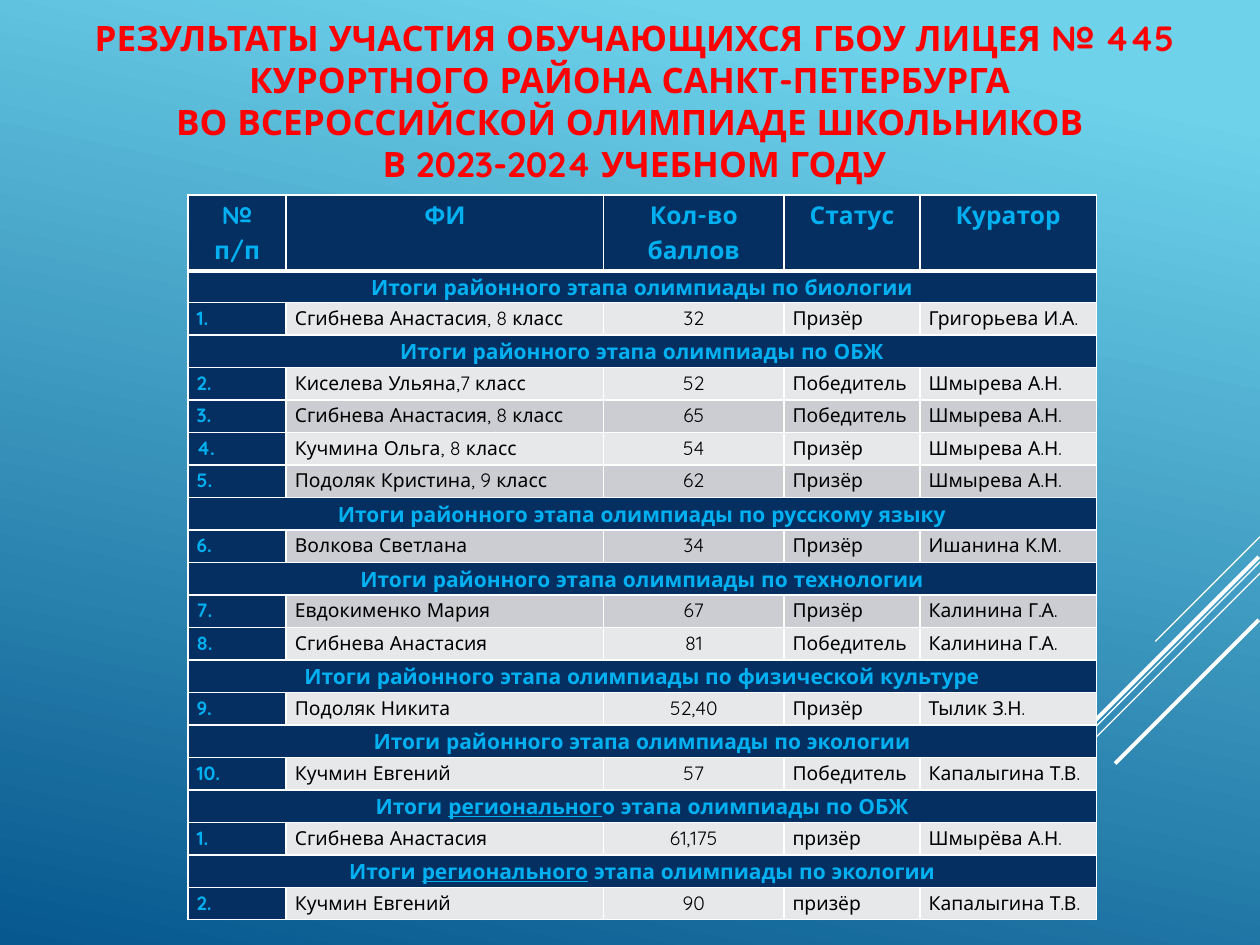
from dataclasses import dataclass

from lxml import etree
from pptx import Presentation
from pptx import util as u
from pptx.dml.color import RGBColor
from pptx.enum import shapes, text
from pptx.oxml import ns

Pt = u.Pt


@dataclass(frozen=True)
class Theme:
    font: str = "Quicksand"
    white: str = "FFFFFF"
    black: str = "000000"
    red: str = "FF0000"
    accent: str = "00B0F0"
    navy: str = "052F61"
    bands: tuple = ("E7E8EA", "CCCDD2")
    sky: str = "6ED2EB"
    deep: str = "06588E"
    title_size: int = 20
    header_size: int = 14
    section_size: int = 12
    body_size: int = 11


# Content: an underscore pair marks underlined words
TITLE = (
    "РЕЗУЛЬТАТЫ УЧАСТИЯ ОБУЧАЮЩИХСЯ ГБОУ ЛИЦЕЯ № 445",
    "КУРОРТНОГО РАЙОНА САНКТ-ПЕТЕРБУРГА ",
    "ВО ВСЕРОССИЙСКОЙ ОЛИМПИАДЕ ШКОЛЬНИКОВ ",
    "В 2023-2024 УЧЕБНОМ ГОДУ",
)
HEADER = ("№ п/п", "ФИ", "Кол-во баллов", "Статус", "Куратор")
SECTIONS = (
    ("Итоги районного этапа олимпиады по биологии", [
        ("1.", "Сгибнева Анастасия, 8 класс", "32", "Призёр", "Григорьева И.А.")]),
    ("Итоги районного этапа олимпиады по ОБЖ", [
        ("2.", "Киселева Ульяна,7 класс", "52", "Победитель", "Шмырева А.Н."),
        ("3.", "Сгибнева Анастасия, 8 класс", "65", "Победитель", "Шмырева А.Н."),
        ("4.", "Кучмина Ольга, 8 класс", "54", "Призёр", "Шмырева А.Н."),
        ("5.", "Подоляк Кристина, 9 класс", "62", "Призёр", "Шмырева А.Н.")]),
    ("Итоги районного этапа олимпиады по русскому языку", [
        ("6.", "Волкова Светлана", "34", "Призёр", "Ишанина К.М.")]),
    ("Итоги районного этапа олимпиады по технологии", [
        ("7.", "Евдокименко Мария", "67", "Призёр", "Калинина Г.А."),
        ("8.", "Сгибнева Анастасия", "81", "Победитель", "Калинина Г.А.")]),
    ("Итоги районного этапа олимпиады по физической культуре", [
        ("9.", "Подоляк Никита", "52,40", "Призёр", "Тылик З.Н.")]),
    ("Итоги районного этапа олимпиады по экологии", [
        ("10.", "Кучмин Евгений", "57", "Победитель", "Капалыгина Т.В.")]),
    ("Итоги _региональног_о этапа олимпиады по ОБЖ", [
        ("1.", "Сгибнева Анастасия", "61,175", "призёр", "Шмырёва А.Н.")]),
    ("Итоги _регионального_ этапа олимпиады по экологии", [
        ("2.", "Кучмин Евгений", "90", "призёр", "Капалыгина Т.В.")]),
)
# Start x, y, end x, y, line width
STRIPES = (
    (720, 306.7, 660.2, 366.5, 0.75),
    (720, 321.1, 525.6, 516.2, 0.75),
    (720, 327.6, 596.2, 451.4, 0.75),
    (719.3, 318.2, 606.2, 431.3, 2.25),
    (719.3, 354.2, 637.2, 436.3, 2.25),
)
COLUMN_WIDTHS = (56.16, 181.44, 102.96, 77.76, 100.8)
HEADER_HEIGHT, FIRST_SECTION_HEIGHT, ROW_HEIGHT = 43.4, 18, 18.57
SCORE_COLUMN = 2


class SlideBuilder:
    def __init__(self, slide, theme):
        self.slide, self.theme = slide, theme

    def background(self):
        fill = self.slide.background.fill
        fill.gradient()
        fill.gradient_angle = 258
        stops = ((0.1, self.theme.sky), (1, self.theme.deep))
        for stop, (position, color) in zip(fill.gradient_stops, stops):
            stop.position = position
            stop.color.rgb = RGBColor.from_string(color)

    def stripe(self, x1, y1, x2, y2, width):
        line = self.slide.shapes.add_connector(
            shapes.MSO_CONNECTOR.STRAIGHT, Pt(x1), Pt(y1), Pt(x2), Pt(y2))
        line.line.color.rgb = RGBColor.from_string(self.theme.white)
        line.line.width = Pt(width)
        etree.SubElement(line._element.spPr, ns.qn("a:effectLst"))

    def run(self, paragraph, words, size, color, bold=True, underline=False):
        run = paragraph.add_run()
        run.text = words
        run.font.name, run.font.size, run.font.bold = self.theme.font, Pt(size), bold
        run.font.color.rgb = RGBColor.from_string(color)
        if underline:
            run.font.underline = True

    def title(self, lines, left, top, width, height):
        frame = self.slide.shapes.add_textbox(
            Pt(left), Pt(top), Pt(width), Pt(height)).text_frame
        frame.word_wrap = True
        frame.vertical_anchor = text.MSO_ANCHOR.MIDDLE
        paragraph = frame.paragraphs[0]
        paragraph.alignment = text.PP_ALIGN.CENTER
        paragraph.line_spacing = Pt(24)
        for index, line in enumerate(lines):
            if index:
                paragraph.add_line_break()
            self.run(paragraph, line, self.theme.title_size, self.theme.red)

    def table(self, left, top, widths, heights):
        table = self.slide.shapes.add_table(
            len(heights), len(widths), Pt(left), Pt(top),
            Pt(sum(widths)), Pt(sum(heights))).table
        table.first_row = table.horz_banding = False
        for column, width in zip(table.columns, widths):
            column.width = Pt(width)
        for row, height in zip(table.rows, heights):
            row.height = Pt(height)
        return table

    def borders(self, cell, top=1, bottom=1):
        properties = cell._tc.get_or_add_tcPr()
        for side, width in (("L", 1), ("R", 1), ("T", top), ("B", bottom)):
            line = etree.SubElement(properties, ns.qn("a:ln" + side), w=str(Pt(width)))
            fill = etree.SubElement(line, ns.qn("a:solidFill"))
            etree.SubElement(fill, ns.qn("a:srgbClr"), val=self.theme.white)

    def cell(self, cell, words, fill, size, color, bold=True, centered=True,
             top=1, bottom=1):
        self.borders(cell, top, bottom)
        cell.fill.solid()
        cell.fill.fore_color.rgb = RGBColor.from_string(fill)
        cell.margin_left = cell.margin_right = Pt(4.95)
        cell.margin_top = cell.margin_bottom = Pt(0)
        paragraph = cell.text_frame.paragraphs[0]
        paragraph.line_spacing = 1.15
        paragraph.alignment = (
            text.PP_ALIGN.CENTER if centered else text.PP_ALIGN.LEFT)
        for index, part in enumerate(words.split("_")):
            if part:
                self.run(paragraph, part, size, color, bold, index % 2 == 1)

    def results(self, left, top):
        theme = self.theme
        row_count = 1 + sum(1 + len(entries) for _, entries in SECTIONS)
        heights = [HEADER_HEIGHT, FIRST_SECTION_HEIGHT]
        heights += [ROW_HEIGHT] * (row_count - 2)
        table = self.table(left, top, COLUMN_WIDTHS, heights)

        # Header row
        for column, heading in enumerate(HEADER):
            self.cell(table.cell(0, column), heading, theme.navy,
                      theme.header_size, theme.accent, bottom=3)

        # Section bands, each followed by its entries
        row = 1
        for section, entries in SECTIONS:
            table.cell(row, 0).merge(table.cell(row, len(HEADER) - 1))
            for column in range(len(HEADER)):
                self.cell(table.cell(row, column), "" if column else section,
                          theme.navy, theme.section_size, theme.accent,
                          top=3 if row == 1 else 1)
            row += 1
            for entry in entries:
                for column, value in enumerate(entry):
                    number = column == 0
                    self.cell(table.cell(row, column), value,
                              theme.navy if number else theme.bands[row % 2],
                              theme.body_size,
                              theme.accent if number else theme.black,
                              bold=number, centered=column == SCORE_COLUMN)
                row += 1


def main():
    deck = Presentation()
    deck.slide_width, deck.slide_height = Pt(720), Pt(540)
    builder = SlideBuilder(deck.slides.add_slide(deck.slide_layouts[6]), Theme())

    # Backdrop
    builder.background()
    for stripe in STRIPES:
        builder.stripe(*stripe)

    # Title and results
    builder.title(TITLE, 30.96, 15.12, 663.12, 84.96)
    builder.results(107.4, 111.4)
    deck.save("out.pptx")


if __name__ == "__main__":
    main()
